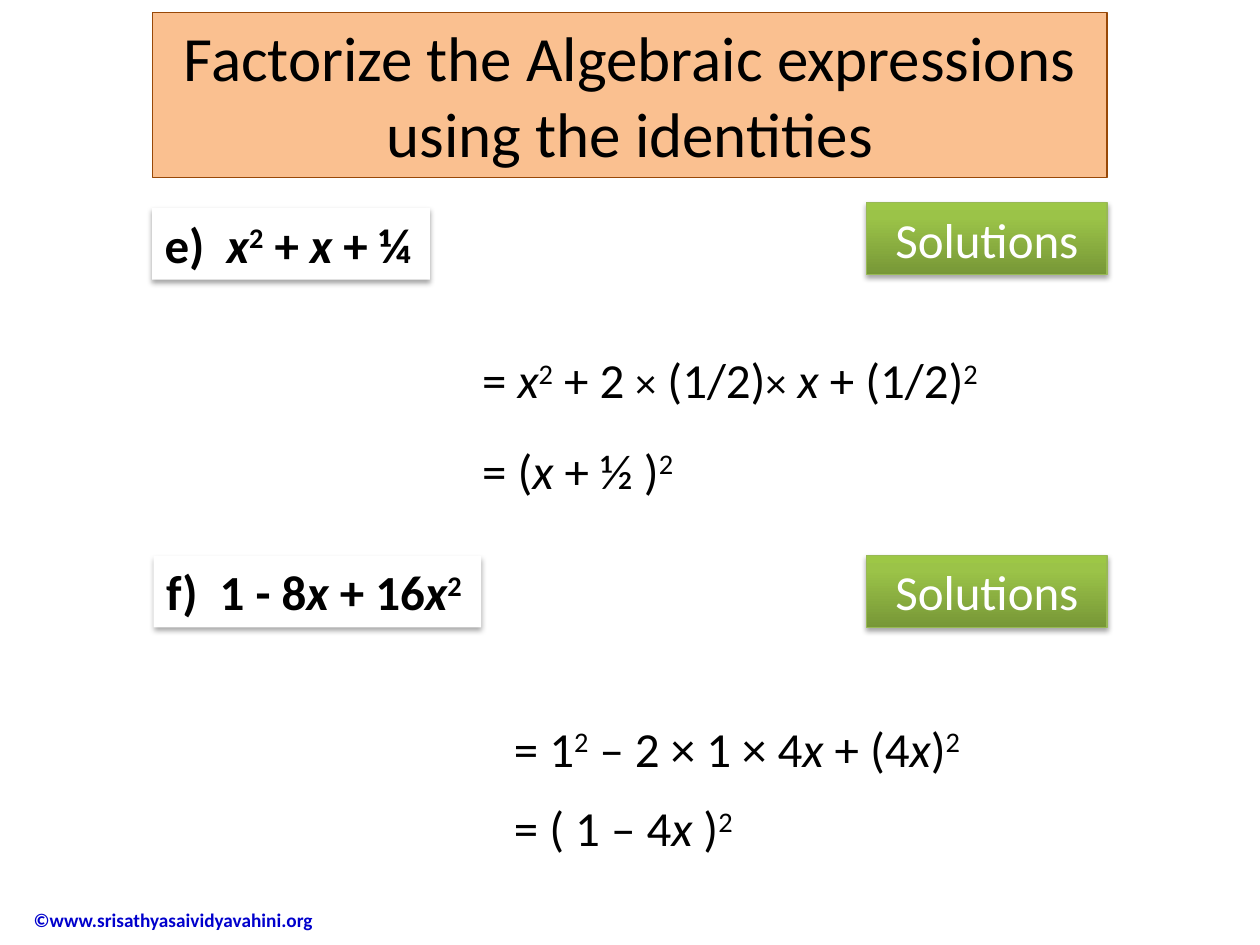
from lxml import etree
from pptx import Presentation
from pptx import util as u
from pptx.dml import color as dml
from pptx.enum import shapes, text
from pptx.oxml import ns

Cm, Pt = u.Cm, u.Pt
FONT = "Calibri"
COLORS = {
    "ink": "000000", "paper": "FFFFFF", "peach": "FAC090", "rust": "984807",
    "green_edge": "98B955", "copyright": "0000CC",
}
GREEN_STOPS = [(0, "779737"), (80, "9BC348"), (100, "9DC746")]
X, SQUARED, TIMES = ("x", "italic"), ("2", "super"), ("×", "small")


def rgb(name):
    return dml.RGBColor.from_string(COLORS[name])


def add_child(parent, tag, **attributes):
    return etree.SubElement(parent, ns.qn(tag), attributes)


def write(paragraph, parts, size, color, bold=False):
    paragraph.font.name = FONT
    paragraph.font.size = Pt(size)
    paragraph.font.bold = bold
    paragraph.font.color.rgb = rgb(color)
    for part in parts:
        words, style = (part, None) if isinstance(part, str) else part
        run = paragraph.add_run()
        run.text = words
        if style == "italic":
            run.font.italic = True
        elif style == "small":
            run.font.size = Pt(24)
        elif style == "super":
            run.font._element.set("baseline", "30000")


def add_panel(slide, box, fill=None, edge=None):
    panel = slide.shapes.add_shape(shapes.MSO_SHAPE.RECTANGLE, *map(Cm, box))
    panel.shadow.inherit = False
    if fill:
        panel.fill.solid()
        panel.fill.fore_color.rgb = rgb(fill)
    if edge:
        panel.line.color.rgb = rgb(edge)
        panel.line.width = Pt(0.75)
    else:
        panel.line.fill.background()
    panel.text_frame.word_wrap = True
    panel.text_frame.vertical_anchor = text.MSO_ANCHOR.TOP
    return panel


def cast_shadow(panel):
    effects = panel._element.spPr.find(ns.qn("a:effectLst"))
    shadow = add_child(effects, "a:outerShdw", blurRad=str(Pt(3.1)), dist=str(Pt(1.8)),
                       dir="5400000", rotWithShape="0")
    black = add_child(shadow, "a:srgbClr", val=COLORS["ink"])
    add_child(black, "a:alpha", val="35000")


def shade_green(panel):
    panel.fill.gradient()
    panel.fill.gradient_angle = 90
    stops = panel._element.spPr.find(".//" + ns.qn("a:gsLst"))
    for stop in list(stops):
        stops.remove(stop)
    for percent, shade in GREEN_STOPS:
        stop = add_child(stops, "a:gs", pos=str(percent * 1000))
        add_child(stop, "a:srgbClr", val=shade)


def add_title(slide, box):
    title = add_panel(slide, box, "peach", "rust").text_frame.paragraphs[0]
    title.alignment = text.PP_ALIGN.CENTER
    write(title, ["Factorize the Algebraic expressions using the identities"], 36, "ink")


def add_question(slide, box, parts):
    question = add_panel(slide, box, "paper")
    cast_shadow(question)
    paragraph = question.text_frame.paragraphs[0]
    paragraph.alignment = text.PP_ALIGN.LEFT
    write(paragraph, parts, 28, "ink", bold=True)


def add_solutions_button(slide, box):
    button = add_panel(slide, box, edge="green_edge")
    shade_green(button)
    cast_shadow(button)
    label = button.text_frame.paragraphs[0]
    label.alignment = text.PP_ALIGN.CENTER
    write(label, ["Solutions"], 28, "paper")


def add_steps(slide, box, steps, space_after):
    frame = slide.shapes.add_textbox(*map(Cm, box)).text_frame
    frame.word_wrap = True
    for number, parts in enumerate(steps):
        step = frame.add_paragraph() if number else frame.paragraphs[0]
        step.alignment = text.PP_ALIGN.JUSTIFY
        step.space_before = Pt(6 if number else 0)
        step.space_after = Pt(space_after)
        write(step, parts, 28, "ink")


def add_exercise(slide, box, question, question_size, question_drop, steps, steps_box, space_after):
    left, top, width = box
    button_width, height = 4.85, 1.45
    steps_left, steps_top, steps_width, steps_height = steps_box
    indent, question_width = question_size
    add_question(slide, (left + indent, top + question_drop, question_width, height), question)
    add_steps(slide, (left + steps_left, top + steps_top, steps_width, steps_height),
              steps, space_after)
    add_solutions_button(slide, (left + width - button_width, top, button_width, height))


def add_copyright(slide, box):
    frame = slide.shapes.add_textbox(*map(Cm, box)).text_frame
    frame.word_wrap = True
    frame.vertical_anchor = text.MSO_ANCHOR.MIDDLE
    notice = frame.paragraphs[0]
    notice._p.get_or_add_pPr().set("marL", str(Cm(1.27)))
    write(notice, ["©www.srisathyasaividyavahini.org"], 11, "copyright", bold=True)


def main():
    deck = Presentation()
    deck.slide_width, deck.slide_height = Cm(25.4), Cm(19.05)
    slide = deck.slides.add_slide(deck.slide_layouts[6])
    left, width = 3.07, 19.25
    add_copyright(slide, (-0.84, 18.03, 7.67, 1.04))
    add_exercise(
        slide, (left, 4.09, width),
        ["e)  ", X, SQUARED, " + ", X, " + ¼"], (0, 5.6), 0.1,
        [["= ", X, SQUARED, " + 2 ", TIMES, " (1/2)", TIMES, " ", X, " + (1/2)", SQUARED],
         ["= (", X, " + ½ )", SQUARED]],
        (6.4, 2.84, 11.2, 3.3), 12)
    add_exercise(
        slide, (left, 11.2, width),
        ["f)  1 - 8", X, " + 16", X, SQUARED], (0.03, 6.6), 0,
        [["= 1", SQUARED, " – 2 × 1 × 4", X, " + (4", X, ")", SQUARED],
         ["= ( 1 – 4", X, " )", SQUARED]],
        (7.04, 3.15, 9.96, 3.07), 6)
    add_title(slide, (left, 0.25, width, 3.33))
    deck.save("out.pptx")


if __name__ == "__main__":
    main()
